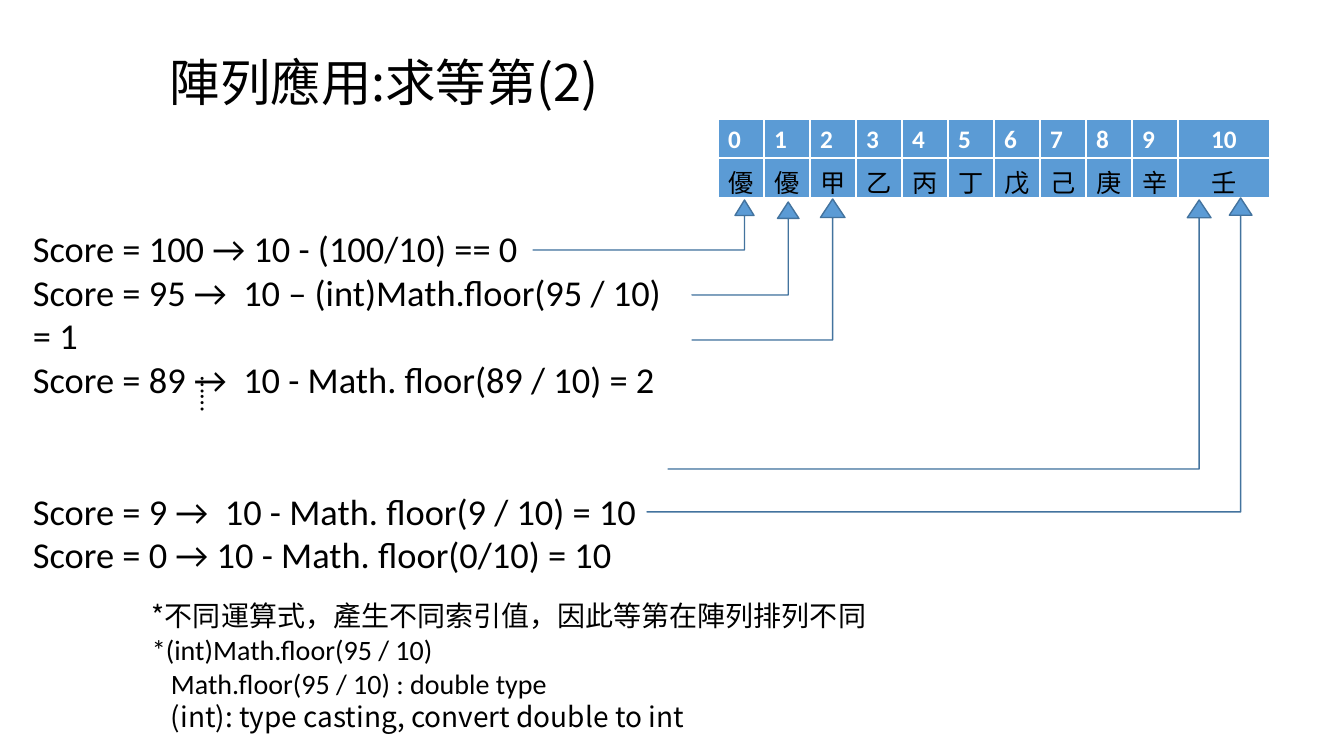
"""Builds the slide that maps scores to grades through an array index."""
from dataclasses import dataclass

from lxml.etree import SubElement
from pptx import Presentation
from pptx.dml.color import RGBColor
from pptx.enum.shapes import MSO_SHAPE as Shape
from pptx.enum.text import MSO_ANCHOR as Anchor, PP_ALIGN as Align
from pptx.oxml import parse_xml
from pptx.oxml.ns import nsdecls, qn
from pptx.util import Emu, Pt

PX = 914400 / 100.8
BLUE = RGBColor(0x5B, 0x9B, 0xD5)
DARK_BLUE = RGBColor(0x43, 0x73, 0x9E)
WHITE = RGBColor(0xFF, 0xFF, 0xFF)
BLACK = RGBColor(0, 0, 0)
LATIN = "Calibri"
CJK = "Noto Sans CJK SC"
TABLE_LEFT = 718
COLUMNS = [46] * 10 + [92]
BORDERS = {"lnL": 1, "lnR": 1, "lnT": 1, "lnB": 3}


@dataclass
class Line:
    text: str
    size: int
    font: str = LATIN
    indent: int = 0
    before: int = 0


@dataclass
class Box:
    left: int
    top: int
    width: int
    height: int
    lines: list[Line]
    vertical: bool = False


@dataclass
class Arrow:
    left: int
    top: int
    width: int
    height: int
    half_head: float
    head_length: float


@dataclass
class Row:
    top: int
    height: int
    values: list[str]
    font: str
    color: RGBColor
    header: bool


ROWS = [
    Row(119, 40, [str(i) for i in range(11)], LATIN, WHITE, True),
    Row(158, 41, list("優優甲乙丙丁戊己庚辛壬"), CJK, BLACK, False),
]
ARROWS = [
    Arrow(533, 200, 221, 50, 0.19, 0.31),
    Arrow(692, 202, 107, 93, 0.115, 0.177),
    Arrow(692, 199, 153, 141, 0.087, 0.132),
    Arrow(668, 200, 543, 269, 0.044, 0.066),
    Arrow(647, 198, 605, 314, 0.036, 0.055),
]
SCORES = Box(23, 221, 670, 363, [
    Line("Score = 100 → 10 - (100/10) == 0", 26),
    Line("Score = 95 →  10 – (int)Math.floor(95 / 10) = 1", 26),
    Line("Score = 89 →  10 - Math. floor(89 / 10) = 2", 26),
    Line("Score = 9 →  10 - Math. floor(9 / 10) = 10", 26, before=63),
    Line("Score = 0 → 10 - Math. floor(0/10) = 10", 26),
])
DETAILS = [
    Box(181, 367, 50, 102, [Line("……", 18)], vertical=True),
    Box(142, 594, 1011, 146, [
        Line("*不同運算式，產生不同索引值，因此等第在陣列排列不同", 20, CJK),
        Line("*(int)Math.floor(95 / 10)", 20),
        Line("Math.floor(95 / 10) : double type", 20, indent=19),
        Line("(int): type casting, convert double to int", 20, CJK, indent=19),
    ]),
    Box(160, 46, 451, 72, [Line("陣列應用:求等第(2)", 36, CJK)]),
]


def px(value: int) -> Emu:
    """Turn pixels into EMU."""
    return Emu(round(value * PX))


def add_run(p, text: str, size: int, font: str, color: RGBColor, bold: bool = False) -> None:
    """Add one formatted run to a paragraph."""
    r = p.add_run()
    r.text = text
    r.font.size = Pt(size)
    r.font.bold = bold
    r.font.color.rgb = color
    r.font.name = font
    if font == CJK:
        SubElement(r._r.get_or_add_rPr(), qn("a:ea")).set("typeface", font)


def add_box(shapes, box: Box) -> None:
    """Draw a text box with one paragraph per line."""
    s = shapes.add_textbox(px(box.left), px(box.top), px(box.width), px(box.height))
    tf = s.text_frame
    tf.word_wrap = True
    if box.vertical:
        s.element.txBody.bodyPr.set("vert", "eaVert")
    for i, line in enumerate(box.lines):
        p = tf.add_paragraph() if i else tf.paragraphs[0]
        if line.before:
            p.space_before = Pt(line.before)
        if line.indent:
            p._p.get_or_add_pPr().set("marL", str(px(line.indent)))
        add_run(p, line.text, line.size, line.font, BLACK)


def add_borders(cell) -> None:
    """Give a cell its white borders."""
    tc_pr = cell._tc.get_or_add_tcPr()
    for i, (tag, width) in enumerate(BORDERS.items()):
        tc_pr.insert(i, parse_xml(
            f'<a:{tag} {nsdecls("a")} w="{Pt(width)}"><a:solidFill>'
            f'<a:srgbClr val="{WHITE}"/></a:solidFill></a:{tag}>'))


def add_row(shapes, row: Row) -> None:
    """Draw a one-row table of array indices or grades."""
    table = shapes.add_table(1, len(COLUMNS), px(TABLE_LEFT), px(row.top),
                             px(sum(COLUMNS)), px(row.height)).table
    table.first_row = table.horz_banding = False
    table.rows[0].height = px(row.height)
    for i, (width, value) in enumerate(zip(COLUMNS, row.values)):
        table.columns[i].width = px(width)
        cell = table.cell(0, i)
        cell.fill.solid()
        cell.fill.fore_color.rgb = BLUE
        add_borders(cell)
        p = cell.text_frame.paragraphs[0]
        if not row.header:
            cell.vertical_anchor = Anchor.MIDDLE
            cell.margin_left = cell.margin_right = cell.margin_bottom = 0
            cell.margin_top = px(5)
        if not row.header or i == len(COLUMNS) - 1:
            p.alignment = Align.CENTER
        add_run(p, value, 18, row.font, row.color, row.header)


def add_arrow(shapes, arrow: Arrow) -> None:
    """Draw a thin bent arrow from a score up to its grade."""
    s = shapes.add_shape(Shape.BENT_UP_ARROW, px(arrow.left), px(arrow.top),
                         px(arrow.width), px(arrow.height))
    s.shadow.inherit = False
    for i, value in enumerate((0, arrow.half_head, arrow.head_length)):
        s.adjustments[i] = value
    s.fill.solid()
    s.fill.fore_color.rgb = BLUE
    s.line.color.rgb = DARK_BLUE
    s.line.width = Pt(1)


def main() -> None:
    """Build and save the slide."""
    prs = Presentation()
    prs.slide_width, prs.slide_height = px(1344), px(756)
    shapes = prs.slides.add_slide(prs.slide_layouts[6]).shapes
    add_box(shapes, SCORES)
    for row in ROWS:
        add_row(shapes, row)
    for arrow in ARROWS:
        add_arrow(shapes, arrow)
    for box in DETAILS:
        add_box(shapes, box)
    prs.save("out.pptx")


if __name__ == "__main__":
    main()
